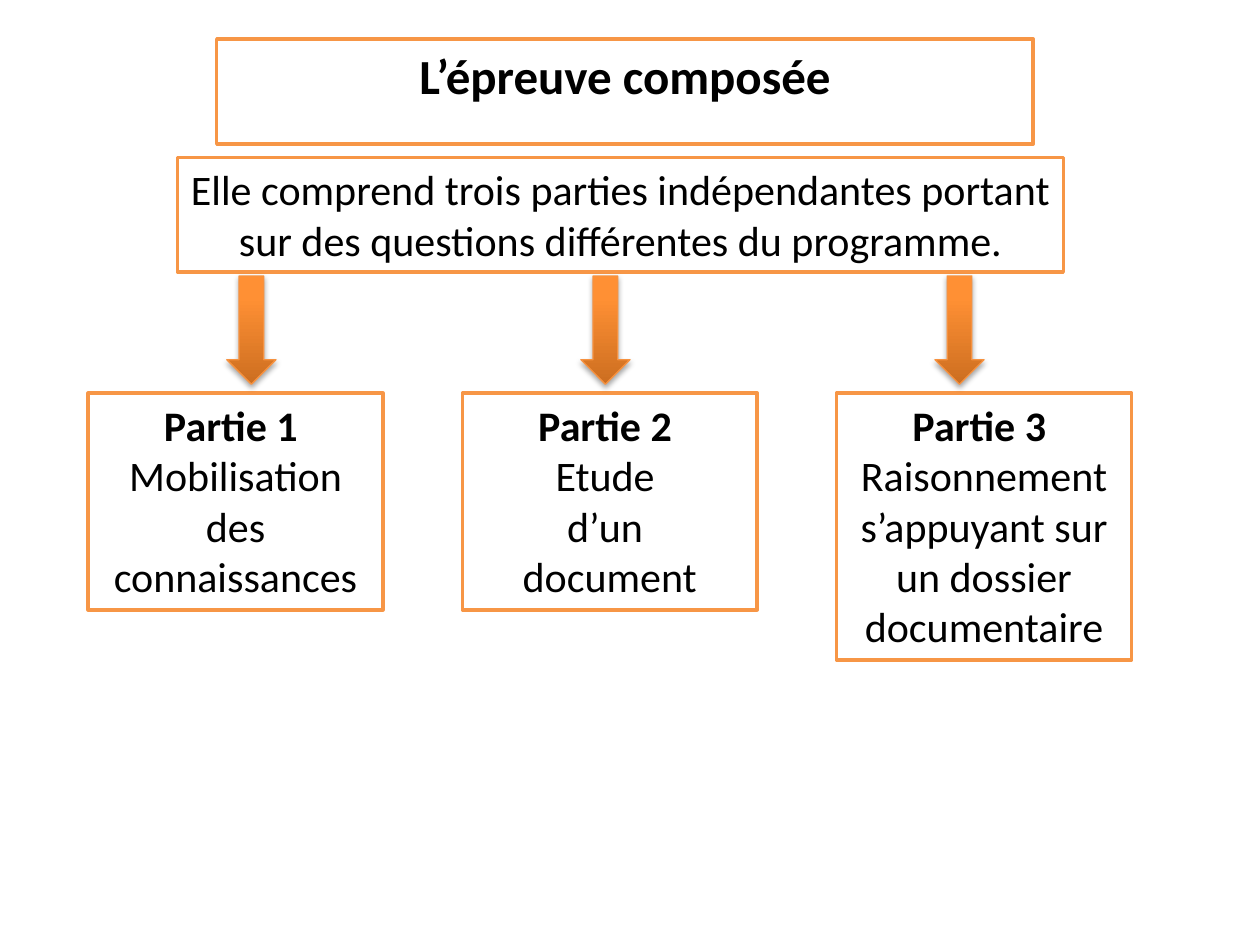
from copy import deepcopy

from pptx import Presentation
from pptx.dml.color import RGBColor as Rgb
from pptx.enum.shapes import MSO_SHAPE as Kind
from pptx.enum.text import MSO_ANCHOR as Anchor, MSO_AUTO_SIZE as Fit, PP_ALIGN as Align
from pptx.oxml.ns import qn
from pptx.util import Inches, Pt

COLORS = {"text": "000000", "fill": "FFFFFF", "edge": "F79646", "rim": "F69240"}
SHADES = [(0, "CC6E20"), (0.8, "FF9034"), (1, "FF9136")]


class Deck:
    font = "Calibri"

    def __init__(self):
        self.prs = Presentation()
        self.prs.slide_width, self.prs.slide_height = Inches(10), Inches(7.5)
        self.slide = self.prs.slides.add_slide(self.prs.slide_layouts[5])

    def color(self, name):
        return Rgb.from_string(COLORS[name])

    def frame(self, shape, lines, size, bold):
        """Outline a shape and fill it with centred text; bold lists bold lines."""
        shape.fill.solid()
        shape.fill.fore_color.rgb = self.color("fill")
        shape.line.color.rgb = self.color("edge")
        shape.line.width = Pt(2)
        text = shape.text_frame
        text.text = "\n".join(lines)
        text.word_wrap = True
        text.auto_size = Fit.SHAPE_TO_FIT_TEXT
        text.vertical_anchor = Anchor.TOP
        for row, para in enumerate(text.paragraphs):
            para.alignment = Align.CENTER
            for run in para.runs:
                run.font.name = self.font
                run.font.size = Pt(size)
                run.font.bold = row in bold
                run.font.color.rgb = self.color("text")

    def title(self, words, x, y, w, h):
        head = self.slide.shapes.title
        head.left, head.top = Inches(x), Inches(y)
        head.width, head.height = Inches(w), Inches(h)
        self.frame(head, [words], 28, [0])

    def box(self, lines, x, y, w, h, bold=()):
        shape = self.slide.shapes.add_shape(
            Kind.RECTANGLE, Inches(x), Inches(y), Inches(w), Inches(h))
        shape.shadow.inherit = False
        self.frame(shape, lines, 24, bold)

    def arrow(self, x, y, w, h):
        # The theme's soft shadow is kept on arrows
        shape = self.slide.shapes.add_shape(
            Kind.DOWN_ARROW, Inches(x), Inches(y), Inches(w), Inches(h))
        shape.line.color.rgb = self.color("rim")
        shape.line.width = Pt(0.75)
        shape.fill.gradient()
        shape.fill.gradient_angle = 90
        stops = shape.element.spPr.find(qn("a:gradFill")).find(qn("a:gsLst"))
        stops.append(deepcopy(stops[-1]))
        for stop, (place, shade) in zip(shape.fill.gradient_stops, SHADES):
            stop.position = place
            stop.color.rgb = Rgb.from_string(shade)


def main():
    deck = Deck()

    # Title and introduction
    deck.title("L’épreuve composée", 1.72, 0.31, 6.48, 0.57)
    deck.box(["Elle comprend trois parties indépendantes portant "
              "sur des questions différentes du programme."],
             1.41, 1.25, 7.03, 0.91)

    # The three parts
    parts = [
        (["Mobilisation des connaissances"], 1.72),
        (["Etude ", "d’un ", "document"], 1.72),
        (["Raisonnement s’appuyant sur un dossier documentaire"], 2.12),
    ]
    for i, (lines, high) in enumerate(parts):
        deck.box([f"Partie {i + 1} ", *lines], 0.7 + 2.97 * i, 3.12, 2.34, high, [0])

    # Arrows from the introduction to the parts
    for i in range(len(parts)):
        deck.arrow(1.8 + 2.81 * i, 2.19, 0.39, 0.86)

    deck.prs.save("out.pptx")


if __name__ == "__main__":
    main()
